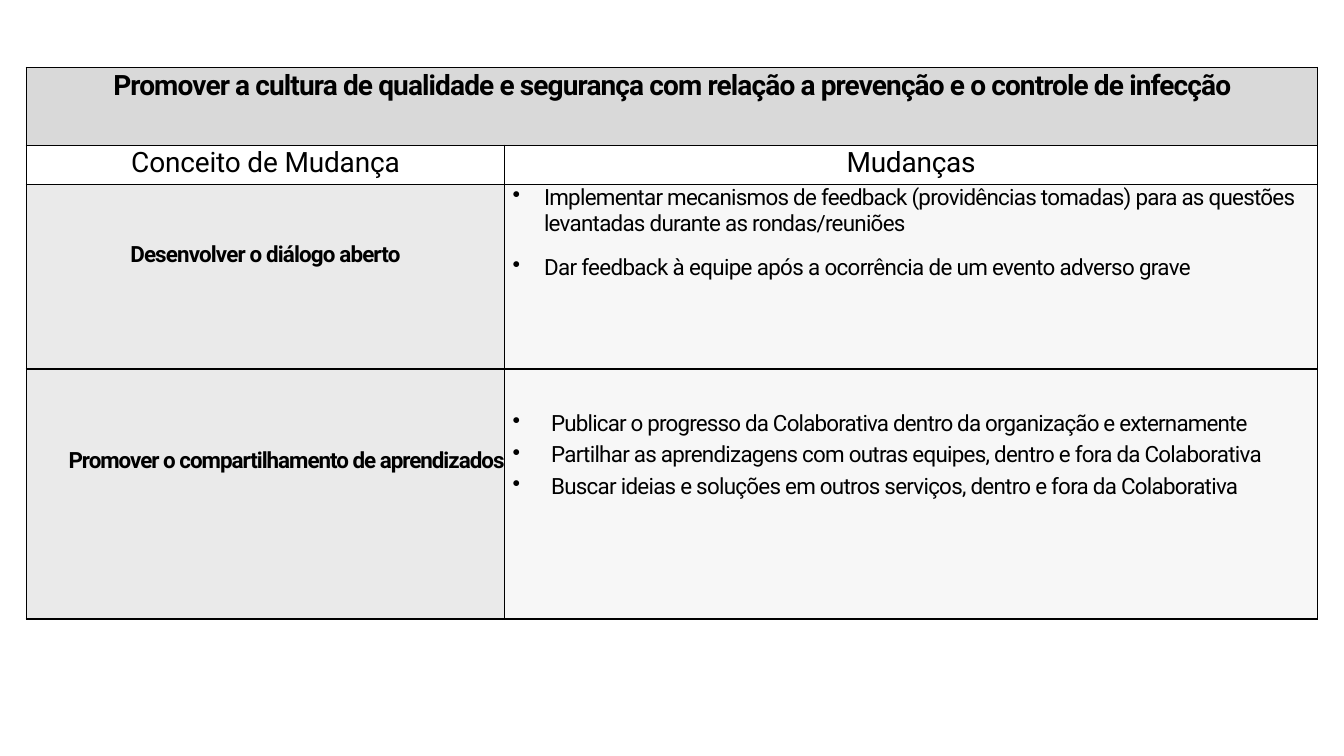
"""Builds a slide with a table of change concepts and their changes."""
from dataclasses import dataclass

from lxml import etree
from pptx import Presentation
from pptx.dml.color import RGBColor
from pptx.enum.text import PP_ALIGN
from pptx.oxml.ns import qn
from pptx.table import _Cell
from pptx.text.text import _Paragraph
from pptx.util import Cm, Pt

CENTER, LEFT, RIGHT = PP_ALIGN.CENTER, PP_ALIGN.LEFT, PP_ALIGN.RIGHT
BLACK = RGBColor(0x00, 0x00, 0x00)
WHITE = RGBColor(0xFF, 0xFF, 0xFF)
TITLE_GRAY = RGBColor(0xD9, 0xD9, 0xD9)
CONCEPT_GRAY = RGBColor(0xEA, 0xEA, 0xEA)
CHANGE_GRAY = RGBColor(0xF7, 0xF7, 0xF7)
FONT = "Roboto"
COLUMN_WIDTHS = (12.06, 20.48)
ROW_HEIGHTS = (1.96, 0.99, 4.65, 6.3)


@dataclass(frozen=True)
class Line:
    """One paragraph and its letter spacing in points."""
    text: str
    tracking: float


@dataclass(frozen=True)
class CellSpec:
    """Place, text and look of one table cell."""
    row: int
    col: int
    lines: tuple[Line, ...]
    fill: RGBColor
    size: float = 16
    bold: bool = False
    align: PP_ALIGN = CENTER
    top: float = 0
    hanging: tuple[float, float] | None = None
    space_before: float = 0
    line_height: float | None = None


CELLS = (
    CellSpec(0, 0, (Line("Promover a cultura de qualidade e segurança com relação a "
                         "prevenção e o controle de infecção", -0.65),),
             TITLE_GRAY, size=20, bold=True, top=0.05),
    CellSpec(1, 0, (Line("Conceito de Mudança", -0.15),), WHITE, size=20, top=0.02),
    CellSpec(1, 1, (Line("Mudanças", -0.2),), WHITE, size=20, top=0.02),
    CellSpec(2, 0, (Line("Desenvolver o diálogo aberto", -0.6),),
             CONCEPT_GRAY, bold=True, top=1.44),
    CellSpec(2, 1, (Line("Implementar mecanismos de feedback (providências tomadas) para as "
                         "questões levantadas durante as rondas/reuniões", -0.52),
                    Line("Dar feedback à equipe após a ocorrência de um evento "
                         "adverso grave", -0.46)),
             CHANGE_GRAY, align=LEFT, hanging=(0.99, 0.79), space_before=12.8),
    CellSpec(3, 0, (Line("Promover o compartilhamento de aprendizados", -0.7),),
             CONCEPT_GRAY, bold=True, align=RIGHT, top=1.98),
    CellSpec(3, 1, (Line("Publicar o progresso da Colaborativa dentro da organização e "
                         "externamente", -0.56),
                    Line("Partilhar as aprendizagens com outras equipes, dentro e fora da "
                         "Colaborativa", -0.52),
                    Line("Buscar ideias e soluções em outros serviços, dentro e fora da "
                         "Colaborativa", -0.5)),
             CHANGE_GRAY, align=LEFT, top=0.92, hanging=(1.17, 0.97),
             space_before=0.5, line_height=22),
)


def add_borders(cell: _Cell) -> None:
    """Draw a thin black line on each side of a cell."""
    tcPr = cell._tc.get_or_add_tcPr()
    for side in ("lnL", "lnR", "lnT", "lnB"):
        ln = etree.SubElement(tcPr, qn(f"a:{side}"), w=str(Pt(1)))
        fill = etree.SubElement(ln, qn("a:solidFill"))
        etree.SubElement(fill, qn("a:srgbClr"), val=str(BLACK))


def add_bullet(p: _Paragraph, margin: float, hang: float) -> None:
    """Give a paragraph a round bullet with a hanging indent in centimetres."""
    pPr = p._p.get_or_add_pPr()
    pPr.set("marL", str(Cm(margin)))
    pPr.set("indent", str(-Cm(hang)))
    etree.SubElement(pPr, qn("a:buChar"), char="•")


def fill_cell(cell: _Cell, spec: CellSpec) -> None:
    """Write and format the paragraphs of a cell."""
    cell.fill.solid()
    cell.fill.fore_color.rgb = spec.fill
    cell.margin_left = cell.margin_right = cell.margin_bottom = 0
    cell.margin_top = Cm(spec.top)
    tf = cell.text_frame
    tf.text = "\n".join(line.text for line in spec.lines)
    for p, line in zip(tf.paragraphs, spec.lines):
        p.alignment = spec.align
        p.space_before = Pt(spec.space_before)
        if spec.line_height:
            p.line_spacing = Pt(spec.line_height)
        if spec.hanging:
            add_bullet(p, *spec.hanging)
        for r in p.runs:
            r.font.name = FONT
            r.font.size = Pt(spec.size)
            r.font.bold = spec.bold
            r.font.color.rgb = BLACK
            r._r.get_or_add_rPr().set("spc", str(round(line.tracking * 100)))


def main() -> None:
    """Build the slide and save it."""
    prs = Presentation()
    prs.slide_width, prs.slide_height = Cm(33.87), Cm(19.05)
    s = prs.slides.add_slide(prs.slide_layouts[6])
    table = s.shapes.add_table(
        len(ROW_HEIGHTS), len(COLUMN_WIDTHS), Cm(0.66), Cm(1.7),
        Cm(sum(COLUMN_WIDTHS)), Cm(sum(ROW_HEIGHTS))).table
    table.first_row = table.horz_banding = False
    for column, width in zip(table.columns, COLUMN_WIDTHS):
        column.width = Cm(width)
    for row, height in zip(table.rows, ROW_HEIGHTS):
        row.height = Cm(height)
    for cell in table.iter_cells():
        add_borders(cell)
    table.cell(0, 0).merge(table.cell(0, 1))
    for spec in CELLS:
        fill_cell(table.cell(spec.row, spec.col), spec)
    prs.save("out.pptx")


if __name__ == "__main__":
    main()
